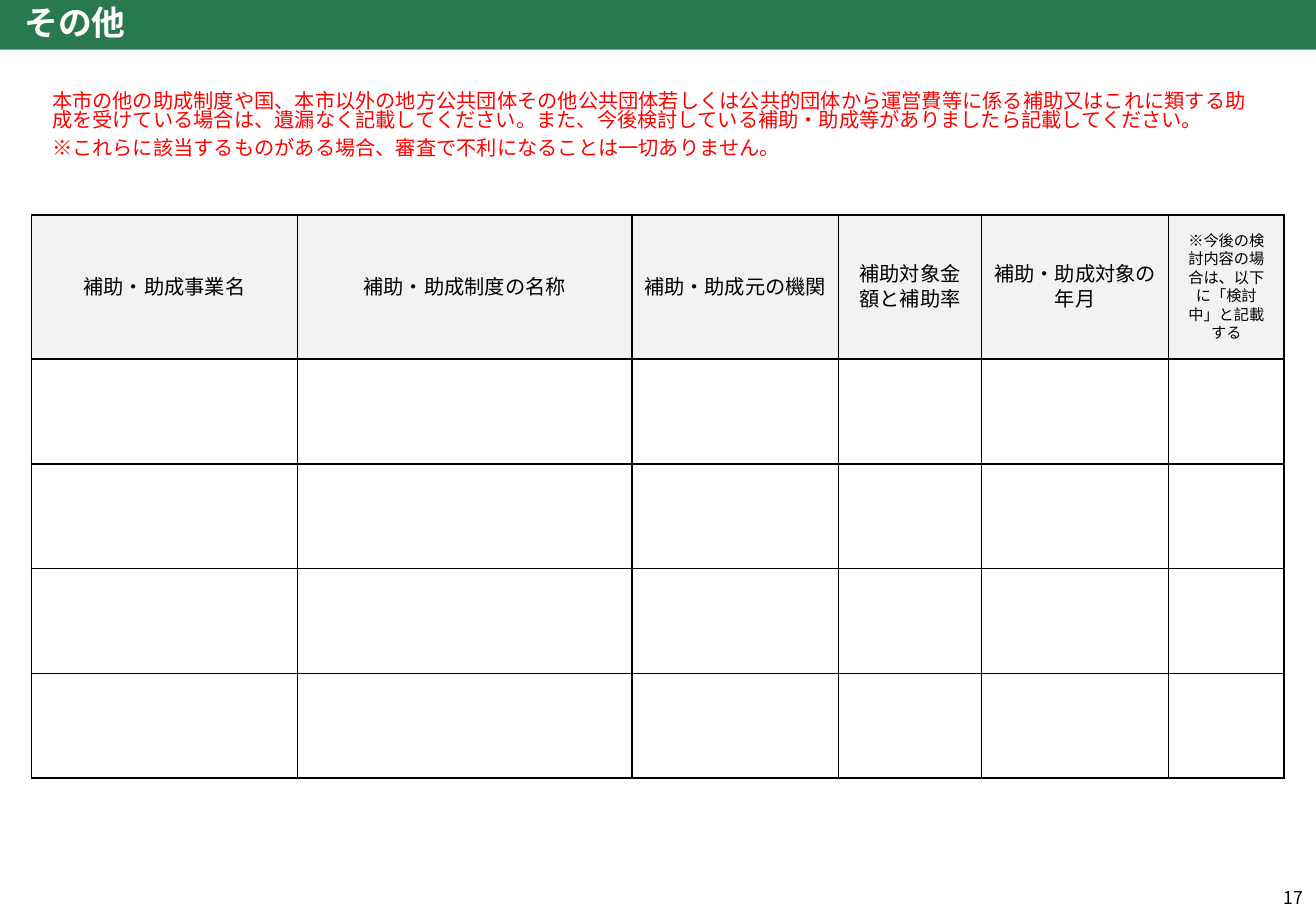
from lxml import etree
from pptx import Presentation
from pptx.dml.color import RGBColor
from pptx.enum.shapes import MSO_SHAPE
from pptx.enum.text import MSO_ANCHOR, PP_ALIGN
from pptx.oxml.ns import qn
from pptx.util import Cm, Pt

RECT = MSO_SHAPE.RECTANGLE
TOP, MID = MSO_ANCHOR.TOP, MSO_ANCHOR.MIDDLE
LEFT, CENTER, RIGHT = PP_ALIGN.LEFT, PP_ALIGN.CENTER, PP_ALIGN.RIGHT

GREEN = RGBColor(0x28, 0x79, 0x50)
WHITE = RGBColor(0xFF, 0xFF, 0xFF)
RED = RGBColor(0xFF, 0x00, 0x00)
BLACK = RGBColor(0x00, 0x00, 0x00)
GRAY = RGBColor(0xF2, 0xF2, 0xF2)

WIDTH, HEIGHT = 27.51, 19.05

NOTES = [
    "本市の他の助成制度や国、本市以外の地方公共団体その他公共団体若しくは公共的団体から"
    "運営費等に係る補助又はこれに類する助成を受けている場合は、遺漏なく記載してください。"
    "また、今後検討している補助・助成等がありましたら記載してください。",
    "※これらに該当するものがある場合、審査で不利になることは一切ありません。",
]
# Heading, column width in cm, text size
COLUMNS = [
    ("補助・助成事業名", 5.56, 12),
    ("補助・助成制度の名称", 6.99, 12),
    ("補助・助成元の機関", 4.32, 12),
    ("補助対象金額と補助率", 2.99, 12),
    ("補助・助成対象の年月", 3.91, 12),
    ("※今後の検討内容の場合は、以下に「検討中」と記載する", 2.41, 9),
]
ROWS = [3.01] + [2.19] * 4


class Page:
    font = "Noto Sans CJK JP"
    grid_font = "Calibri"

    def __init__(self, deck):
        self.slide = deck.slides.add_slide(deck.slide_layouts[6])
        self.shapes = self.slide.shapes

    def style(self, frame, size, color, font, align=LEFT, bold=False):
        for para in frame.paragraphs:
            para.alignment = align
            for run in para.runs:
                run.font.size = Pt(size)
                run.font.bold = bold
                run.font.color.rgb = color
                run.font.name = font
                asian = etree.SubElement(run.font._element, qn("a:ea"))
                asian.set("typeface", font)

    def title(self, text, height):
        bar = self.shapes.add_shape(RECT, 0, 0, Cm(WIDTH), Cm(height))
        bar.shadow.inherit = False
        bar.fill.solid()
        bar.fill.fore_color.rgb = GREEN
        bar.line.fill.background()
        frame = bar.text_frame
        frame.text = text
        frame.vertical_anchor = MID
        frame.margin_left = Cm(0.51)
        frame.paragraphs[0].line_spacing = 0.9
        self.style(frame, 20, WHITE, self.font, bold=True)

    def text(self, lines, box, size, color, align=LEFT, anchor=TOP):
        frame = self.shapes.add_textbox(*map(Cm, box)).text_frame
        frame.word_wrap = True
        frame.vertical_anchor = anchor
        frame.text = "\n".join(lines)
        self.style(frame, size, color, self.font, align)
        return frame

    def border(self, cell):
        props = cell._tc.get_or_add_tcPr()
        for spot, side in enumerate(("a:lnL", "a:lnR", "a:lnT", "a:lnB")):
            line = etree.Element(qn(side), w=str(Pt(1)))
            fill = etree.SubElement(line, qn("a:solidFill"))
            etree.SubElement(fill, qn("a:srgbClr"), val=str(BLACK))
            props.insert(spot, line)

    def table(self, left, top, columns, rows):
        wide = sum(width for _, width, _ in columns)
        box = map(Cm, (left, top, wide, sum(rows)))
        grid = self.shapes.add_table(len(rows), len(columns), *box).table
        grid.horz_banding = False
        grid.first_row = False
        for row, height in zip(grid.rows, rows):
            row.height = Cm(height)
        for index, (label, width, size) in enumerate(columns):
            grid.columns[index].width = Cm(width)
            head = grid.cell(0, index)
            head.text_frame.text = label
            head.vertical_anchor = MID
            self.style(head.text_frame, size, BLACK, self.grid_font, CENTER)
            for number in range(len(rows)):
                cell = grid.cell(number, index)
                cell.fill.solid()
                cell.fill.fore_color.rgb = WHITE if number else GRAY
                self.border(cell)


def main():
    deck = Presentation()
    deck.slide_width, deck.slide_height = Cm(WIDTH), Cm(HEIGHT)
    page = Page(deck)
    page.title("その他", 1.04)
    notes = page.text(NOTES, (0.84, 1.85, 25.81, 2.2), 12, RED)
    for para in notes.paragraphs:
        para.line_spacing = 0.75
        para.space_before = Pt(6)
    page.text(["17"], (25.32, 18.49, 2.18, 0.56), 10.5, BLACK, RIGHT, MID)
    page.table(0.66, 4.5, COLUMNS, ROWS)
    deck.save("out.pptx")


if __name__ == "__main__":
    main()
